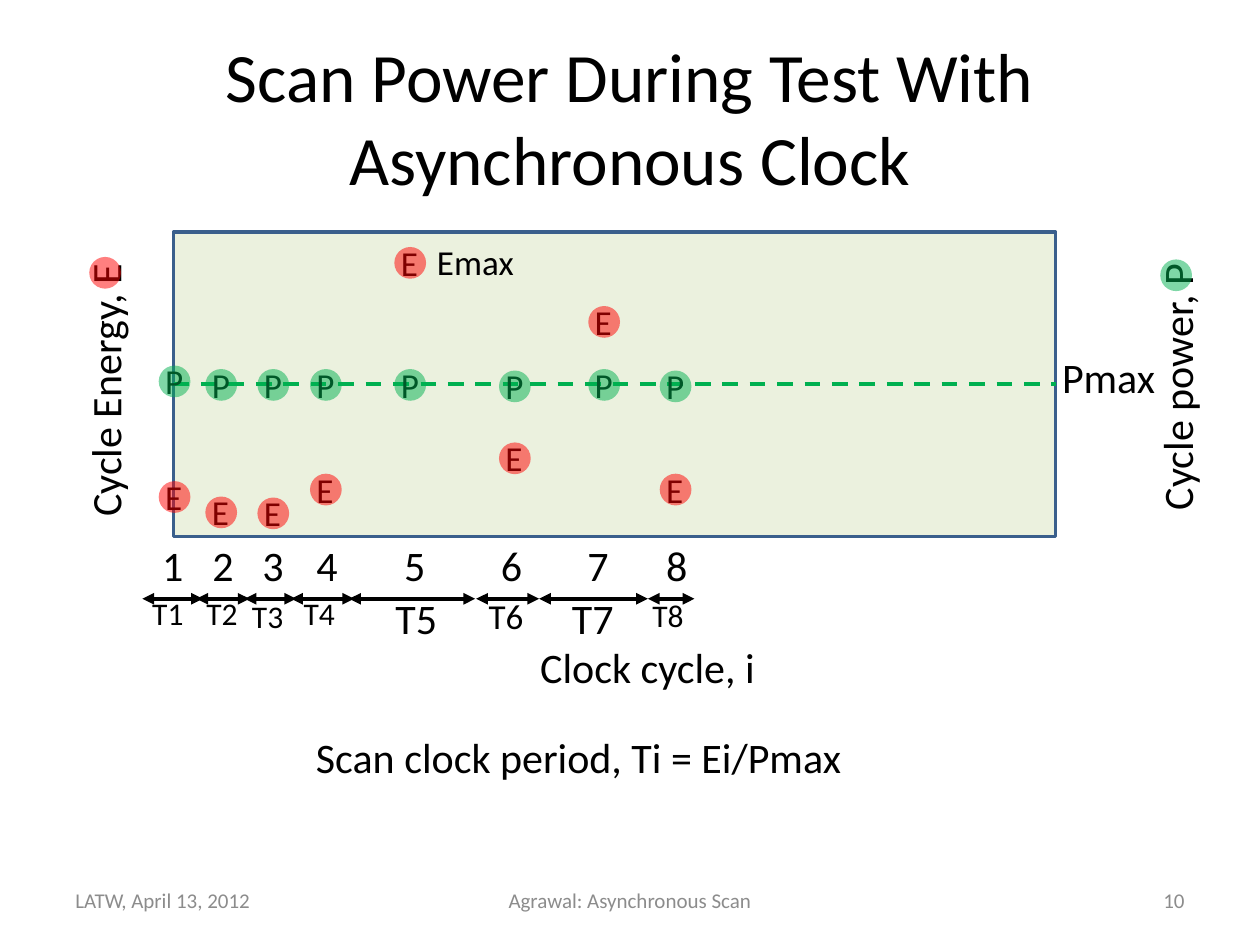
from lxml.etree import SubElement as add_element
from pptx import Presentation
from pptx.dml.color import RGBColor
from pptx.enum.dml import MSO_LINE
from pptx.enum.shapes import MSO_CONNECTOR as Connector, MSO_SHAPE as Preset
from pptx.enum.text import MSO_ANCHOR as Anchor, MSO_AUTO_SIZE as AutoSize, PP_ALIGN as Align
from pptx.oxml.ns import qn
from pptx.util import Cm, Pt

COLORS = {
    "text": "000000",
    "footer": "8C8C8C",
    "plot": "EBF1DE",
    "border": "3A5F8C",
    "energy": "FF0000",
    "power": "00B050",
}
LABEL_HEIGHT = {18: 1.02, 20: 1.12, 24: 1.27}
DOT_SIZE = 0.64
ARROW_Y = 12.07

MARKS = [
    (3.2, 9.7, 7.37),
    (4.14, 10.01, 7.44),
    (5.19, 10.03, 7.44),
    (6.25, 9.55, 7.44),
    (7.95, 4.98, 7.44),
    (10.06, 8.92, 7.47),
    (11.86, 6.17, 7.44),
    (13.3, 9.55, 7.47),
]
PERIODS = [
    (2.87, 4.09, 2.82, 11.86, 1.14, 18),
    (3.96, 5.03, 3.91, 11.86, 1.14, 18),
    (4.93, 5.97, 4.83, 11.91, 1.14, 18),
    (5.87, 7.14, 5.87, 11.86, 1.14, 18),
    (7.04, 9.58, 7.72, 11.81, 1.37, 24),
    (9.6, 10.87, 9.6, 11.86, 1.22, 20),
    (10.87, 13.06, 11.28, 11.81, 1.37, 24),
    (13.06, 14, 12.9, 11.89, 1.14, 18),
]
CYCLE_TABS = [1.01, 2.02, 3.11, 4.88, 6.83, 8.57, 10.16]


class SlideBuilder:
    def __init__(self, page, font="Calibri"):
        self.page = page
        self.font = font

    def color(self, name):
        return RGBColor.from_string(COLORS[name])

    def fill_para(self, para, text, size, color="text", **layout):
        para.text = text
        for name, value in layout.items():
            setattr(para, name, value)
        style = {"name": self.font, "size": Pt(size)}
        for span in para.runs:
            for name, value in style.items():
                setattr(span.font, name, value)
            span.font.color.rgb = self.color(color)

    def block(self, text, left, top, width, height, size, color="text", align=Align.LEFT):
        box = self.page.shapes.add_textbox(Cm(left), Cm(top), Cm(width), Cm(height))
        frame = {"word_wrap": True, "vertical_anchor": Anchor.MIDDLE}
        for name, value in frame.items():
            setattr(box.text_frame, name, value)
        self.fill_para(box.text_frame.paragraphs[0], text, size, color, alignment=align)
        return box

    def label(self, text, left, top, width, size, rotation=0, parent=None):
        shapes = (parent or self.page).shapes
        box = shapes.add_textbox(Cm(left), Cm(top), Cm(width), Cm(LABEL_HEIGHT[size]))
        box.rotation = rotation
        frame = {"word_wrap": False, "auto_size": AutoSize.SHAPE_TO_FIT_TEXT}
        for name, value in frame.items():
            setattr(box.text_frame, name, value)
        self.fill_para(box.text_frame.paragraphs[0], text, size)

    def shape(self, preset, left, top, width, height, fill, parent=None):
        shapes = (parent or self.page).shapes
        shape = shapes.add_shape(preset, Cm(left), Cm(top), Cm(width), Cm(height))
        shape.shadow.inherit = False
        shape.fill.solid()
        shape.fill.fore_color.rgb = self.color(fill)
        return shape

    def plot(self, left, top, width, height):
        plot = self.shape(Preset.RECTANGLE, left, top, width, height, "plot")
        plot.line.color.rgb = self.color("border")
        plot.line.width = Pt(2)
        return plot

    def dot(self, left, top, fill, parent=None):
        dot = self.shape(Preset.OVAL, left, top, DOT_SIZE, DOT_SIZE, fill, parent)
        dot.line.fill.background()
        tint = dot._element.spPr.find(qn("a:solidFill"))[0]
        add_element(tint, qn("a:alpha"), val="50000")

    def mark(self, letter, left, top, fill):
        group = self.page.shapes.add_group_shape()
        self.label(letter, left - 0.12, top - 0.24, 0.88, 20, parent=group)
        self.dot(left, top, fill, group)

    def line(self, start, end, y, color):
        line = self.page.shapes.add_connector(
            Connector.STRAIGHT, Cm(start), Cm(y), Cm(end), Cm(y))
        line.line.color.rgb = self.color(color)
        line.line.width = Pt(2.25)
        add_element(line._element.spPr, qn("a:effectLst"))
        return line

    def double_arrow(self, start, end, y):
        arrow = self.line(start, end, y, "text")
        outline = arrow._element.spPr.find(qn("a:ln"))
        for tip in ("a:headEnd", "a:tailEnd"):
            add_element(outline, qn(tip), type="triangle")

    def cycle_axis(self, left, top, width, height):
        box = self.block("", left, top, width, height, 24)
        box.text_frame.vertical_anchor = Anchor.TOP
        numbers = box.text_frame.paragraphs[0]
        cycles = range(1, len(MARKS) + 1)
        self.fill_para(numbers, "\t".join(map(str, cycles)), 24)
        tabs = add_element(numbers._p.get_or_add_pPr(), qn("a:tabLst"))
        for stop in CYCLE_TABS:
            add_element(tabs, qn("a:tab"), pos=str(Cm(stop)), algn="l")
        caption = box.text_frame.add_paragraph()
        self.fill_para(caption, "Clock cycle, i", 24, space_before=Pt(29))
        caption._p.get_or_add_pPr().set("marL", str(Cm(7.62)))


def main():
    deck = Presentation()
    deck.slide_width, deck.slide_height = Cm(25.4), Cm(19.05)
    page = deck.slides.add_slide(deck.slide_layouts[6])
    builder = SlideBuilder(page)

    title = "\v".join(["Scan Power During Test With", "Asynchronous Clock"])
    builder.block(title, 1.27, 0.76, 22.86, 3.18, 39.6, align=Align.CENTER)
    for text, left, width, align in [
        ("LATW, April 13, 2012", 1.27, 5.92, Align.LEFT),
        ("Agrawal: Asynchronous Scan", 8.68, 8.04, Align.CENTER),
        ("10", 18.2, 5.93, Align.RIGHT),
    ]:
        builder.block(text, left, 17.65, width, 1.01, 12, "footer", align)

    plot = builder.plot(3.5, 4.68, 17.78, 6.14)
    builder.cycle_axis(3.02, 10.76, 12.57, 3.33)
    limit = builder.line(3.5, 21.28, 7.75, "power")
    limit.line.dash_style = MSO_LINE.DASH
    limit.begin_connect(plot, 1)
    limit.end_connect(plot, 3)

    builder.label("Cycle Energy, E", -0.81, 7.11, 5.84, 24, rotation=270)
    builder.label("Cycle power, P", 20.96, 7.14, 5.51, 24, rotation=270)
    builder.label("Emax", 8.56, 4.72, 2.08, 20)
    builder.label("Pmax", 21.16, 6.96, 2.41, 24)
    builder.dot(1.8, 5.18, "energy")
    builder.dot(23.39, 5.23, "power")

    for left, energy_top, power_top in MARKS:
        builder.mark("E", left, energy_top, "energy")
        builder.mark("P", left, power_top, "power")

    for cycle, (start, end, left, top, width, size) in enumerate(PERIODS, 1):
        builder.double_arrow(start, end, ARROW_Y)
        builder.label(f"T{cycle}", left, top, width, size)

    builder.label("Scan clock period, Ti = Ei/Pmax", 6.12, 14.63, 11.2, 24)
    deck.save("out.pptx")


if __name__ == "__main__":
    main()
